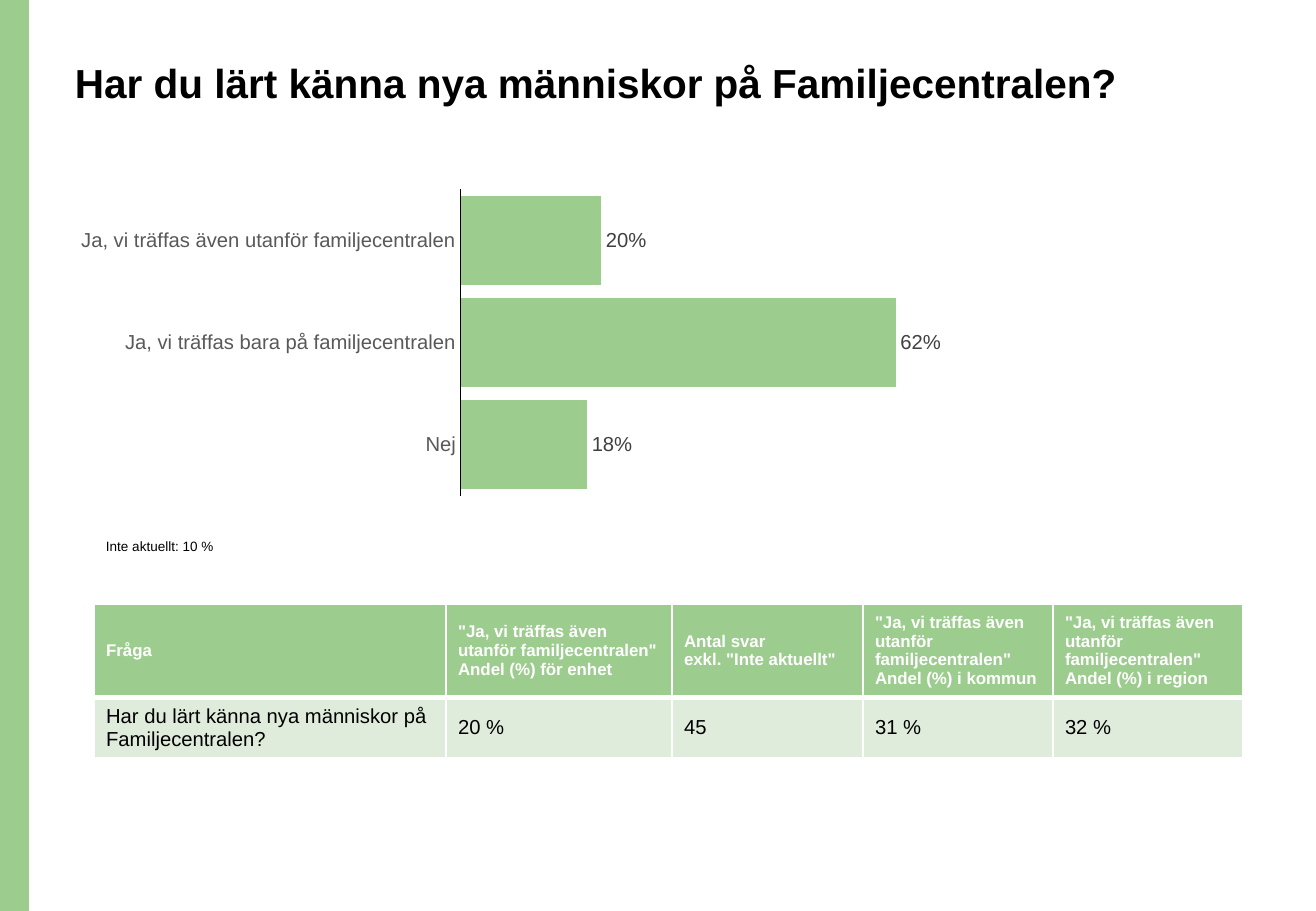
import pptx
import pptx.chart.data
import pptx.dml.color
import pptx.enum.chart
import pptx.enum.shapes
import pptx.enum.text
import pptx.oxml
import pptx.oxml.ns
import pptx.util

PX = 7526
GREEN, PALE, WHITE, BLACK = "9DCC8F", "DFECDB", "FFFFFF", "000000"


def px(n):
    return pptx.util.Emu(n * PX)


def rgb(value):
    return pptx.dml.color.RGBColor.from_string(value)


class Deck:
    def __init__(self, width, height, font):
        self.prs = pptx.Presentation()
        self.prs.slide_width, self.prs.slide_height = px(width), px(height)
        self.font = font
        self.s = self.prs.slides.add_slide(self.prs.slide_layouts[6])

    def style(self, font, size, color, bold=False):
        font.name, font.size, font.bold = self.font, pptx.util.Pt(size), bold
        font.color.rgb = rgb(color)

    def add_lines(self, tf, lines, size, color, bold=False, spacing=None):
        for i, line in enumerate(lines):
            p = tf.add_paragraph() if i else tf.paragraphs[0]
            p.line_spacing = spacing
            r = p.add_run()
            r.text = line
            self.style(r.font, size, color, bold)

    def rect(self, x, y, w, h, fill):
        sp = self.s.shapes.add_shape(
            pptx.enum.shapes.MSO_SHAPE.RECTANGLE, px(x), px(y), px(w), px(h))
        sp.shadow.inherit = False
        sp.fill.solid()
        sp.fill.fore_color.rgb = rgb(fill)
        sp.line.fill.background()

    def text(self, x, y, w, h, line, size, bold=False, spacing=None):
        tf = self.s.shapes.add_textbox(px(x), px(y), px(w), px(h)).text_frame
        tf.word_wrap = True
        self.add_lines(tf, [line], size, BLACK, bold, spacing)

    def borders(self, cell, bottom):
        pr = cell._tc.get_or_add_tcPr()
        ns = pptx.oxml.ns.nsdecls("a")
        for i, side in enumerate("LRTB"):
            width = pptx.util.Pt(bottom if side == "B" else 1)
            pr.insert(i, pptx.oxml.parse_xml(
                f'<a:ln{side} {ns} w="{width}"><a:solidFill>'
                f'<a:srgbClr val="{WHITE}"/></a:solidFill></a:ln{side}>'))

    def table(self, x, y, widths, heights, rows, looks):
        frame = self.s.shapes.add_table(
            len(rows), len(widths), px(x), px(y), px(sum(widths)), px(sum(heights)))
        tbl = frame.table
        for column, width in zip(tbl.columns, widths):
            column.width = px(width)
        for row, height, texts, look in zip(tbl.rows, heights, rows, looks):
            row.height = px(height)
            fill, size, color, bold, bottom = look
            for cell, lines in zip(row.cells, texts):
                cell.vertical_anchor = pptx.enum.text.MSO_ANCHOR.MIDDLE
                cell.fill.solid()
                cell.fill.fore_color.rgb = rgb(fill)
                self.borders(cell, bottom)
                self.add_lines(cell.text_frame, lines, size, color, bold)

    def bar_chart(self, x, y, w, h, name, answers, top):
        data = pptx.chart.data.CategoryChartData(number_format="0%")
        data.categories = list(answers)
        data.add_series(name, answers.values())
        chart = self.s.shapes.add_chart(
            pptx.enum.chart.XL_CHART_TYPE.BAR_CLUSTERED,
            px(x), px(y), px(w), px(h), data).chart
        chart.has_legend = chart.has_title = False
        self.style(chart.font, 10, BLACK)

        axis = chart.category_axis
        axis.reverse_order = True
        axis.has_major_gridlines = False
        axis.major_tick_mark = pptx.enum.chart.XL_TICK_MARK.NONE
        axis.format.line.color.rgb = rgb(BLACK)
        axis.format.line.width = pptx.util.Pt(0.75)
        self.style(axis.tick_labels.font, 12, "595959")

        values = chart.value_axis
        values.visible = values.has_major_gridlines = False
        values.minimum_scale, values.maximum_scale = 0, top

        plot = chart.plots[0]
        plot.gap_width = 15
        plot.vary_by_categories = False
        fill = plot.series[0].format.fill
        fill.solid()
        fill.fore_color.rgb = rgb(GREEN)
        plot.has_data_labels = True
        labels = plot.data_labels
        labels.show_value = True
        labels.number_format, labels.number_format_is_linked = "0%", False
        labels.position = pptx.enum.chart.XL_LABEL_POSITION.OUTSIDE_END
        self.style(labels.font, 12, "404040")


def main():
    question = "Har du lärt känna nya människor på Familjecentralen?"
    outside = "Ja, vi träffas även utanför familjecentralen"
    quoted = f'"{outside}"'
    deck = Deck(1316, 911, "Arial")
    deck.rect(0, 0, 29, 911, GREEN)
    deck.text(63, 58, 1135, 124, question, 24, bold=True, spacing=0.9)
    deck.bar_chart(63, 183, 907, 319, "Andel", {
        outside: 0.2,
        "Ja, vi träffas bara på familjecentralen": 0.62,
        "Nej": 0.18,
    }, 0.7)
    deck.text(94, 524, 255, 34, "Inte aktuellt: 10 %", 8, spacing=1.5)
    deck.table(94, 604, [352, 226, 191, 190, 190], [87, 57], [
        [["Fråga"],
         [quoted, "Andel (%) för enhet"],
         ["Antal svar", 'exkl. "Inte aktuellt"'],
         [quoted, "Andel (%) i kommun"],
         [quoted, "Andel (%) i region"]],
        [[question], ["20 %"], ["45"], ["31 %"], ["32 %"]],
    ], [(GREEN, 10, WHITE, True, 3), (PALE, 12, BLACK, False, 1)])
    deck.prs.save("out.pptx")


if __name__ == "__main__":
    main()
